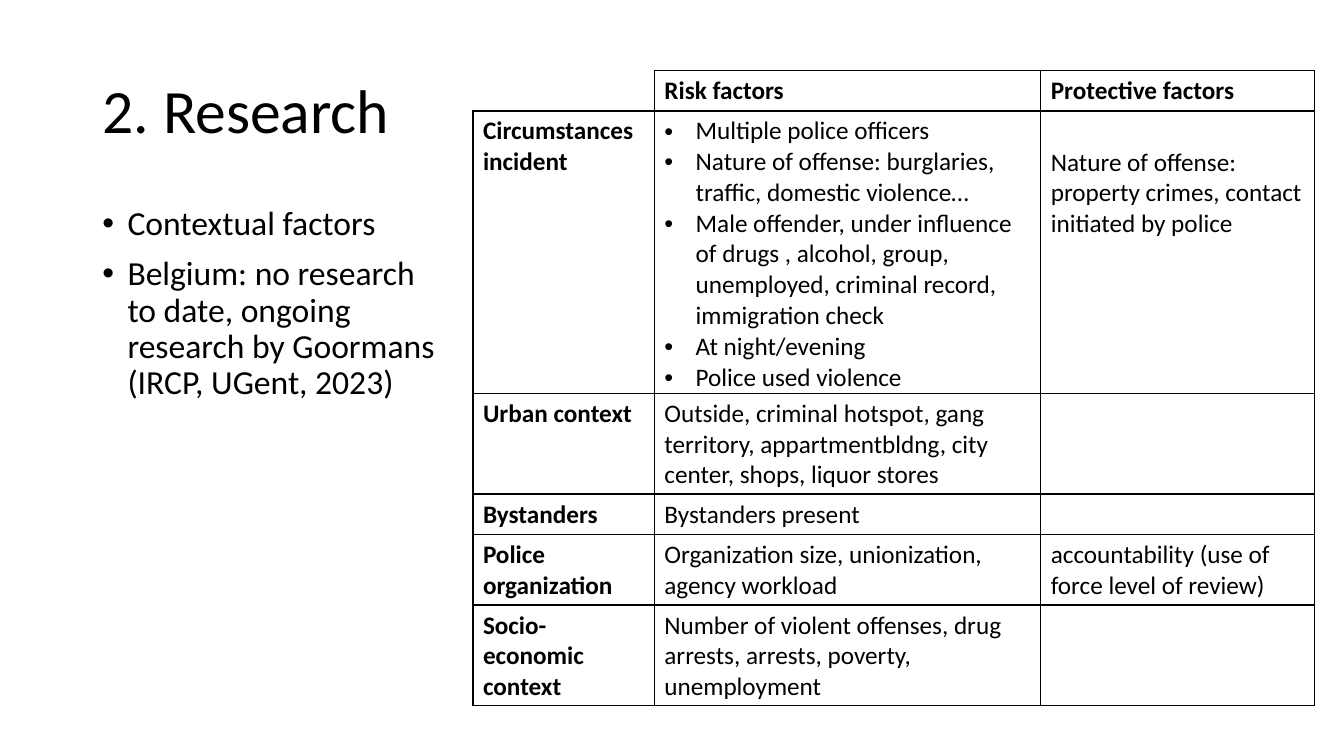
from lxml import etree
from pptx import Presentation
from pptx import util as u
from pptx.dml.color import RGBColor
from pptx.enum import text
from pptx.oxml.ns import qn

BLACK = RGBColor(0x00, 0x00, 0x00)
COLUMNS, ROWS = 80, 45

FACTORS = ["Contextual factors",
           "Belgium: no research to date, ongoing research by Goormans (IRCP, UGent, 2023)"]
INCIDENT_RISKS = [
    "Multiple police officers",
    "Nature of offense: burglaries, traffic, domestic violence…",
    "Male offender, under influence of drugs , alcohol, group, unemployed, "
    "criminal record, immigration check",
    "At night/evening",
    "Police used violence",
]
# Number of text lines in the row, then its cells; a list is a bulleted cell.
FACTOR_ROWS = [
    (1, "", "Risk factors", "Protective factors"),
    (9, "Circumstances incident", INCIDENT_RISKS,
     "Nature of offense: property crimes, contact initiated by police"),
    (3, "Urban context", "Outside, criminal hotspot, gang territory, "
     "appartmentbldng, city center, shops, liquor stores", ""),
    (1, "Bystanders", "Bystanders present", ""),
    (2, "Police organization", "Organization size, unionization, agency workload",
     "accountability (use of force level of review)"),
    (3, "Socio-economic context", "Number of violent offenses, drug arrests, "
     "arrests, poverty, unemployment", ""),
]


class ResearchSlide:
    """Style and current slide; positions are in grid columns and rows."""

    font = "Calibri"

    def __init__(self, prs):
        self.dx = prs.slide_width / COLUMNS
        self.dy = prs.slide_height / ROWS
        self.s = prs.slides.add_slide(prs.slide_layouts[5])

    def box(self, x, y, w, h):
        return [u.Emu(round(n * d)) for n, d in
                zip((x, y, w, h), (self.dx, self.dy) * 2)]

    def fill_text(self, tf, lines, size, bold=False, indent=0, **paragraph):
        """Fill a text frame; an indent in inches adds bullets."""
        for i, line in enumerate(lines):
            p = tf.paragraphs[0] if i == 0 else tf.add_paragraph()
            for name, value in paragraph.items():
                setattr(p, name, value)
            if indent:
                pPr = p._p.get_or_add_pPr()
                pPr.set("marL", str(u.Inches(indent)))
                pPr.set("indent", str(-u.Inches(indent)))
                etree.SubElement(pPr, qn("a:buFont"), typeface="Arial")
                etree.SubElement(pPr, qn("a:buChar"), char="•")
            r = p.add_run()
            r.text = line
            r.font.color.rgb = BLACK
            style = {"name": self.font, "size": u.Pt(size), "bold": bold}
            for name, value in style.items():
                setattr(r.font, name, value)

    def title(self, words, *place):
        sp = self.s.shapes.title
        sp.left, sp.top, sp.width, sp.height = self.box(*place)
        sp.text_frame.vertical_anchor = text.MSO_ANCHOR.MIDDLE
        self.fill_text(sp.text_frame, [words], 44, line_spacing=0.9,
                       alignment=text.PP_ALIGN.LEFT)

    def bullets(self, lines, *place):
        tf = self.s.shapes.add_textbox(*self.box(*place)).text_frame
        tf.word_wrap = True
        self.fill_text(tf, lines, 24, indent=0.25, line_spacing=0.9,
                       space_before=u.Pt(10))

    def borders(self, cell, hidden=()):
        tcPr = cell._tc.get_or_add_tcPr()
        for i, side in enumerate("LRTB"):
            ln = etree.Element(qn(f"a:ln{side}"), w=str(u.Pt(1)))
            if side in hidden:
                etree.SubElement(ln, qn("a:noFill"))
            else:
                fill = etree.SubElement(ln, qn("a:solidFill"))
                etree.SubElement(fill, qn("a:srgbClr"), val=str(BLACK))
            tcPr.insert(i, ln)

    def table(self, rows, widths, x, y):
        heights = [0.6 + 1.8 * row[0] for row in rows]
        place = self.box(x, y, sum(widths), sum(heights))
        tbl = self.s.shapes.add_table(len(rows), len(widths), *place).table
        tbl.first_row = tbl.horz_banding = False
        for column, width in zip(tbl.columns, widths):
            column.width = round(width * self.dx)
        for i, (_, *cells) in enumerate(rows):
            tbl.rows[i].height = round(heights[i] * self.dy)
            for j, content in enumerate(cells):
                cell = tbl.cell(i, j)
                cell.fill.background()
                self.borders(cell, "LT" if i == j == 0 else "")
                listed = isinstance(content, list)
                self.fill_text(cell.text_frame, content if listed else [content], 18,
                               bold=i == 0 or j == 0, indent=0.31 if listed else 0)
        return tbl


def main():
    prs = Presentation()
    prs.slide_width, prs.slide_height = u.Inches(13.33), u.Inches(7.5)
    slide = ResearchSlide(prs)
    slide.title("2. Research", 5.5, 2.4, 69, 8.7)
    slide.bullets(FACTORS, 5.5, 12, 21.1, 28.6)
    tbl = slide.table(FACTOR_ROWS, (10.8, 23, 16.3), 28.15, 4.2)
    # Start level with the second line of the neighbouring cell.
    tbl.cell(1, 2).margin_top = u.Inches(0.36)
    prs.save("out.pptx")


if __name__ == "__main__":
    main()
